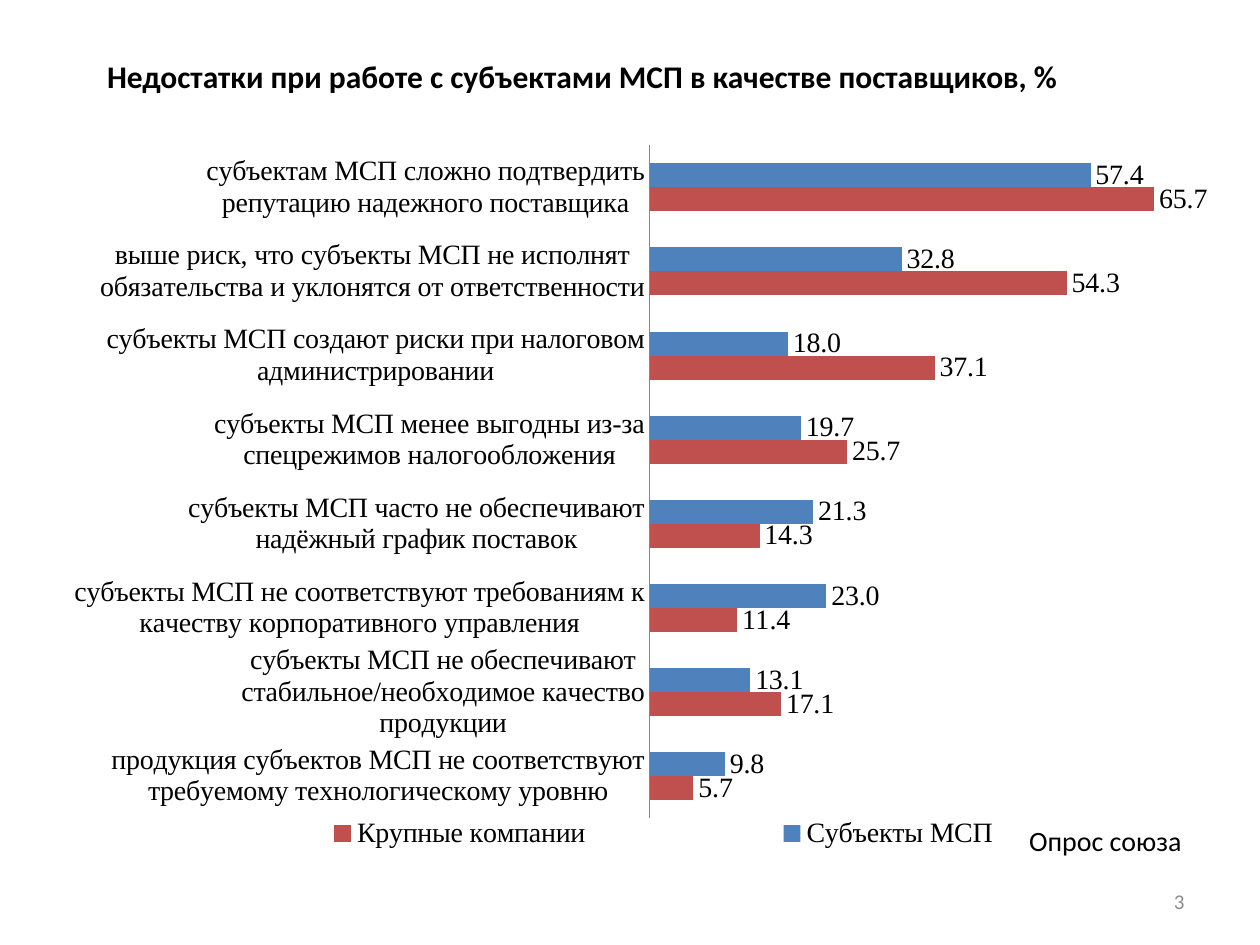
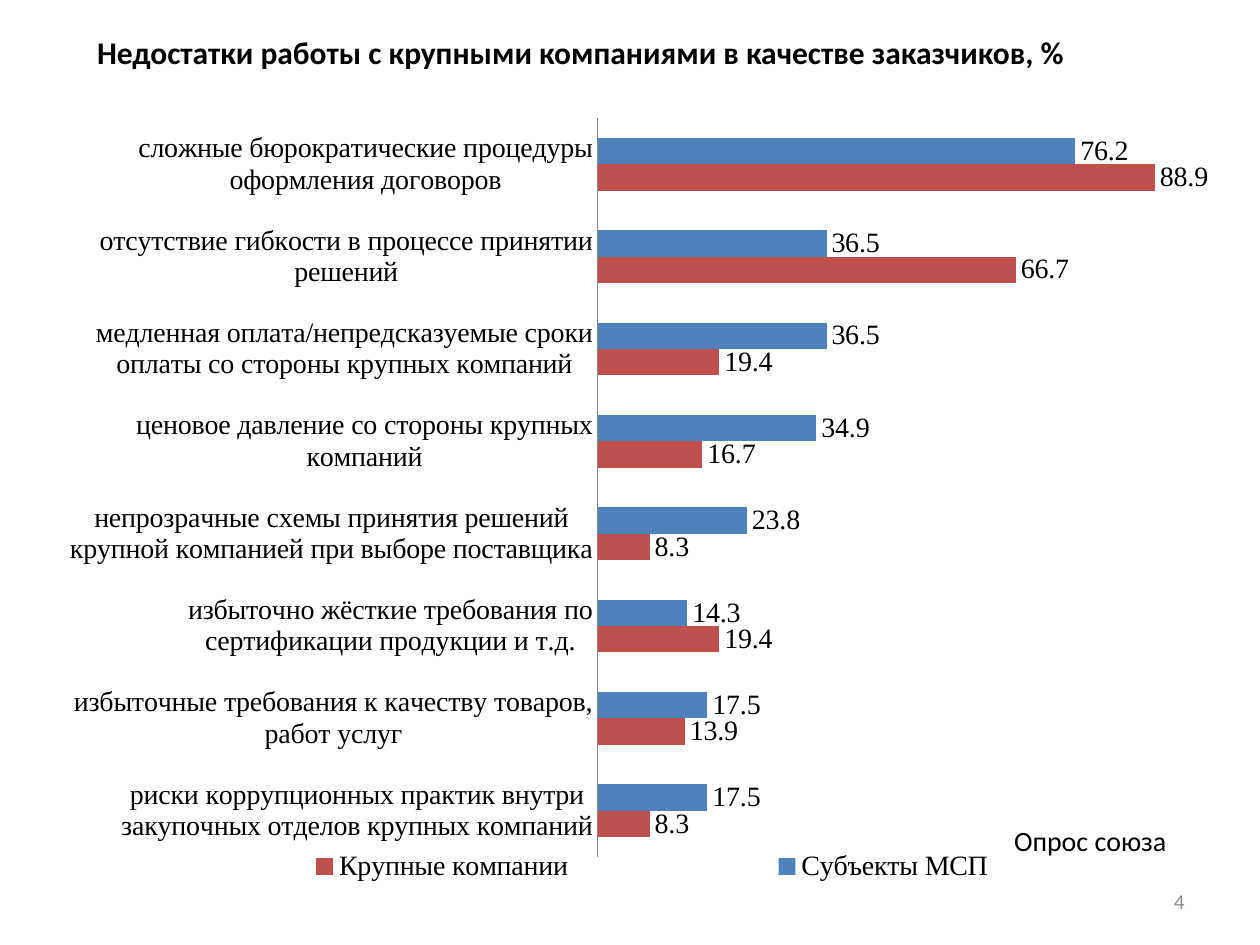
from dataclasses import dataclass

from lxml import etree
from pptx import Presentation
from pptx.chart.data import CategoryChartData
from pptx.dml.color import RGBColor
from pptx.enum.chart import (
    XL_CHART_TYPE, XL_LABEL_POSITION, XL_LEGEND_POSITION, XL_TICK_LABEL_POSITION, XL_TICK_MARK,
)
from pptx.enum.text import MSO_ANCHOR, MSO_AUTO_SIZE, PP_ALIGN
from pptx.oxml.ns import qn
from pptx.util import Inches, Pt

BLACK = RGBColor(0x00, 0x00, 0x00)
GRAY = RGBColor(0x8C, 0x8C, 0x8C)
AXIS_GRAY = RGBColor(0x86, 0x86, 0x86)
BLUE = RGBColor(0x4F, 0x81, 0xBD)
RED = RGBColor(0xC0, 0x50, 0x4D)

TEXT_FONT = "Calibri"
CHART_FONT = "Times New Roman"
TITLE_ONLY = 5
SOURCE_CAPTION = "Опрос союза"
SMALL_BUSINESS, LARGE_COMPANIES = "Субъекты МСП", "Крупные компании"
SERIES_COLORS = (BLUE, RED)
LEGEND_AREA = (0.06, 0.94, 0.91, 0.05)


@dataclass
class SurveySlide:
    """Boxes are in inches; the plot area is in fractions of the chart."""
    number: int
    title: str
    title_box: tuple
    chart_box: tuple
    plot_area: tuple
    axis_maximum: int
    source_left: float
    answers: list  # (category, small business, large companies)


SUPPLIERS = SurveySlide(
    number=3,
    title="Недостатки при работе с субъектами МСП в качестве поставщиков, %",
    title_box=(0.75, 0.4, 8.74, 0.4),
    chart_box=(0.59, 0.99, 9.06, 5.83),
    plot_area=(0.503, 0.028, 0.472, 0.916),
    axis_maximum=70,
    source_left=8.07,
    answers=[
        ("субъектам МСП сложно подтвердить репутацию надежного поставщика", 57.4, 65.7),
        ("выше риск, что субъекты МСП не исполнят обязательства и уклонятся от ответственности",
         32.8, 54.3),
        ("субъекты МСП создают риски при налоговом администрировании", 18, 37.1),
        ("субъекты МСП менее выгодны из-за спецрежимов налогообложения", 19.7, 25.7),
        ("субъекты МСП часто не обеспечивают надёжный график поставок", 21.3, 14.3),
        ("субъекты МСП не соответствуют требованиям к качеству корпоративного управления",
         23, 11.4),
        ("субъекты МСП не обеспечивают стабильное/необходимое качество продукции", 13.1, 17.1),
        ("продукция субъектов МСП не соответствуют требуемому технологическому уровню", 9.8, 5.7),
    ],
)

CUSTOMERS = SurveySlide(
    number=4,
    title="Недостатки работы с крупными компаниями в качестве заказчиков, %",
    title_box=(0.67, 0.21, 8.9, 0.4),
    chart_box=(0.35, 0.76, 9.37, 6.34),
    plot_area=(0.469, 0.028, 0.531, 0.925),
    axis_maximum=100,
    source_left=7.95,
    answers=[
        ("сложные бюрократические процедуры оформления договоров", 76.2, 88.9),
        ("отсутствие гибкости в процессе принятии решений", 36.5, 66.7),
        ("медленная оплата/непредсказуемые сроки оплаты со стороны крупных компаний", 36.5, 19.4),
        ("ценовое давление со стороны крупных компаний", 34.9, 16.7),
        ("непрозрачные схемы принятия решений крупной компанией при выборе поставщика", 23.8, 8.3),
        ("избыточно жёсткие требования по сертификации продукции и т.д.", 14.3, 19.4),
        ("избыточные требования к качеству товаров, работ услуг", 17.5, 13.9),
        ("риски коррупционных практик внутри закупочных отделов крупных компаний", 17.5, 8.3),
    ],
)


def set_font(font, size, color=BLACK, name=TEXT_FONT, bold=False):
    font.name, font.size, font.bold = name, Pt(size), bold
    font.color.rgb = color


def write_text(shape, text, size, color=BLACK, bold=False,
               align=PP_ALIGN.LEFT, anchor=MSO_ANCHOR.TOP):
    frame = shape.text_frame
    frame.text = text
    frame.word_wrap = True
    frame.auto_size = MSO_AUTO_SIZE.NONE
    frame.vertical_anchor = anchor
    paragraph = frame.paragraphs[0]
    paragraph.alignment = align
    set_font(paragraph.font, size, color, bold=bold)


def add_title(slide, text, box):
    title = slide.shapes.title
    title.left, title.top, title.width, title.height = map(Inches, box)
    write_text(title, text, 18, bold=True)


def add_text(slide, text, box, size, **style):
    write_text(slide.shapes.add_textbox(*map(Inches, box)), text, size, **style)


def set_manual_layout(parent, index, area, inner=False):
    """Place a chart part at fractions (left, top, width, height) of the chart."""
    for old_layout in parent.findall(qn("c:layout")):
        parent.remove(old_layout)
    layout = etree.Element(qn("c:layout"))
    manual = etree.SubElement(layout, qn("c:manualLayout"))
    settings = [("layoutTarget", "inner")] if inner else []
    settings += [("xMode", "edge"), ("yMode", "edge")]
    settings += zip("xywh", map(str, area))
    for tag, value in settings:
        etree.SubElement(manual, qn(f"c:{tag}")).set("val", value)
    parent.insert(index, layout)


def format_axes(chart, maximum):
    categories = chart.category_axis
    categories.reverse_order = True
    categories.major_tick_mark = categories.minor_tick_mark = XL_TICK_MARK.NONE
    categories.tick_label_position = XL_TICK_LABEL_POSITION.NEXT_TO_AXIS
    categories.format.line.color.rgb = AXIS_GRAY
    categories.format.line.width = Pt(0.75)
    set_font(categories.tick_labels.font, 16, name=CHART_FONT)
    values = chart.value_axis
    values.minimum_scale, values.maximum_scale = 0, maximum
    values.has_major_gridlines = False
    values.visible = False


def format_bars(plot):
    plot.gap_width, plot.overlap = 150, 0
    plot.vary_by_categories = False
    for series, color in zip(plot.series, SERIES_COLORS):
        series.format.fill.solid()
        series.format.fill.fore_color.rgb = color
        series.invert_if_negative = False
        labels = series.data_labels
        labels.show_value = True
        labels.position = XL_LABEL_POSITION.OUTSIDE_END
        labels.number_format = "#,##0.0"
        labels.number_format_is_linked = False
        set_font(labels.font, 16, name=CHART_FONT)


def add_legend(chart):
    chart.has_legend = True
    legend = chart.legend
    legend.position = XL_LEGEND_POSITION.TOP
    legend.include_in_layout = False
    set_font(legend.font, 16, name=CHART_FONT)
    set_manual_layout(chart.element.find(f".//{qn('c:legend')}"), 1, LEGEND_AREA)


def add_survey_chart(slide, survey):
    categories, small_business, large_companies = zip(*survey.answers)
    data = CategoryChartData(number_format="0.0")
    data.categories = categories
    data.add_series(SMALL_BUSINESS, small_business)
    data.add_series(LARGE_COMPANIES, large_companies)
    chart = slide.shapes.add_chart(
        XL_CHART_TYPE.BAR_CLUSTERED, *map(Inches, survey.chart_box), data).chart
    chart.has_title = False
    set_font(chart.font, 10, name=CHART_FONT)
    format_axes(chart, survey.axis_maximum)
    format_bars(chart.plots[0])
    add_legend(chart)
    plot_area = chart.element.find(f".//{qn('c:plotArea')}")
    set_manual_layout(plot_area, 0, survey.plot_area, inner=True)


def add_survey_slide(presentation, survey):
    slide = presentation.slides.add_slide(presentation.slide_layouts[TITLE_ONLY])
    add_title(slide, survey.title, survey.title_box)
    add_survey_chart(slide, survey)
    add_text(slide, SOURCE_CAPTION, (survey.source_left, 6.49, 1.65, 0.37), 16)
    add_text(slide, str(survey.number), (7.17, 6.95, 2.33, 0.4), 12,
             color=GRAY, align=PP_ALIGN.RIGHT, anchor=MSO_ANCHOR.MIDDLE)


def main():
    presentation = Presentation()
    presentation.slide_width, presentation.slide_height = Inches(10), Inches(7.5)
    for survey in (SUPPLIERS, CUSTOMERS):
        add_survey_slide(presentation, survey)
    presentation.save("out.pptx")


if __name__ == "__main__":
    main()
